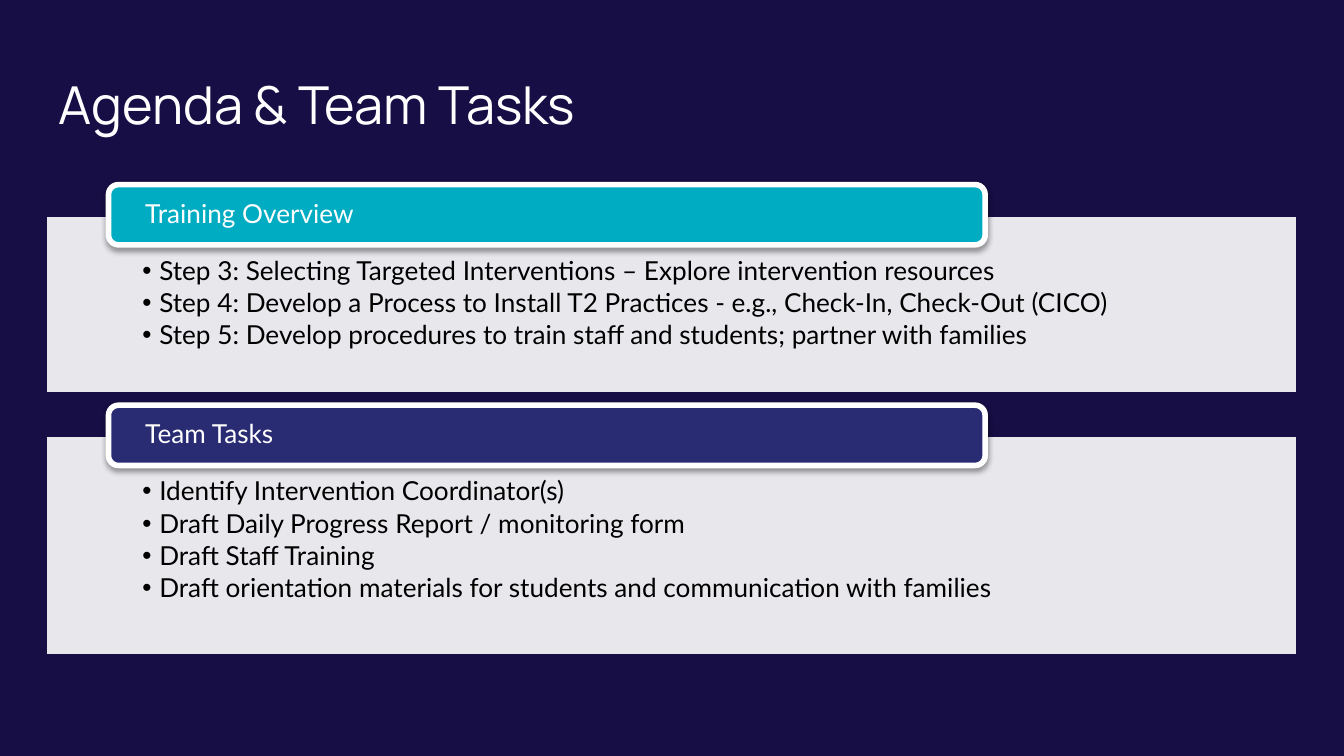
from dataclasses import dataclass

from pptx import Presentation
from pptx.dml.color import RGBColor
from pptx.enum.shapes import MSO_SHAPE
from pptx.enum.text import MSO_ANCHOR, MSO_AUTO_SIZE, PP_ALIGN
from pptx.oxml.ns import qn
from pptx.oxml.xmlchemy import OxmlElement
from pptx.util import Cm, Pt

ROUND_RECT = MSO_SHAPE.ROUNDED_RECTANGLE
TOP, MIDDLE = MSO_ANCHOR.TOP, MSO_ANCHOR.MIDDLE
NO_FIT = MSO_AUTO_SIZE.NONE
LEFT = PP_ALIGN.LEFT


@dataclass(frozen=True)
class Theme:
    navy: str = "160E44"
    white: str = "FFFFFF"
    black: str = "000000"
    teal: str = "00ACC2"
    indigo: str = "292C73"
    title_font: str = "Manrope"
    body_font: str = "Lato"
    title_size: int = 28
    body_size: int = 14


T = Theme()

SECTIONS = [
    ("Training Overview", T.teal, 3.38, [
        "Step 3: Selecting Targeted Interventions – Explore intervention resources",
        "Step 4: Develop a Process to Install T2 Practices - e.g., Check-In, Check-Out (CICO)",
        "Step 5: Develop procedures to train staff and students; partner with families",
    ]),
    ("Team Tasks", T.indigo, 4.17, [
        "Identify Intervention Coordinator(s)",
        "Draft Daily Progress Report / monitoring form",
        "Draft Staff Training",
        "Draft orientation materials for students and communication with families",
    ]),
]


def set_attrs(obj, values):
    for name, value in values.items():
        setattr(obj, name, value)


def add_child(parent, tag, **attrs):
    el = OxmlElement(tag)
    for name, value in attrs.items():
        el.set(name, str(value))
    parent.append(el)
    return el


def place(sp, box):
    set_attrs(sp, dict(zip(("left", "top", "width", "height"), map(Cm, box))))


def paint(sp, fill, line, width):
    sp.fill.solid()
    sp.fill.fore_color.rgb = RGBColor.from_string(fill)
    sp.line.color.rgb = RGBColor.from_string(line)
    sp.line.width = Pt(width)


def write(sp, lines, font, size, color, insets, anchor, after=0):
    tf = sp.text_frame
    sides = ("margin_left", "margin_top", "margin_right", "margin_bottom")
    set_attrs(tf, dict(zip(sides, map(Cm, insets))))
    set_attrs(tf, {"word_wrap": True, "auto_size": NO_FIT, "vertical_anchor": anchor})
    for i, line in enumerate(lines):
        p = tf.add_paragraph() if i else tf.paragraphs[0]
        set_attrs(p, {"alignment": LEFT, "line_spacing": 0.9,
                      "space_before": Pt(0), "space_after": Pt(after)})
        r = p.add_run()
        r.text = line
        set_attrs(r.font, {"name": font, "size": Pt(size)})
        r.font.color.rgb = RGBColor.from_string(color)


def add_shadow(sp):
    sp.shadow.inherit = False
    effects = sp._element.spPr.find(qn("a:effectLst"))
    shadow = add_child(effects, "a:outerShdw", blurRad=Pt(3.1), dist=Pt(1.6),
                       dir=90 * 60000, rotWithShape=0)
    color = add_child(shadow, "a:srgbClr", val=T.black)
    add_child(color, "a:alpha", val=38000)


def fill_title(sp, box, text):
    place(sp, box)
    write(sp, [text], T.title_font, T.title_size, T.white, [0.25] * 4, MIDDLE)


def fill_list(sp, box, items):
    place(sp, box)
    paint(sp, T.white, T.navy, 2)
    color = sp._element.spPr.find(qn("a:solidFill")).find(qn("a:srgbClr"))
    add_child(color, "a:alpha", val=90000)
    write(sp, items, T.body_font, T.body_size, T.black,
          (1.83, 0.81, 1.83, 0.28), TOP, after=2.1)
    for p in sp.text_frame.paragraphs:
        pPr = p._p.get_or_add_pPr()
        pPr.set("marL", str(Cm(0.32)))
        pPr.set("indent", str(-Cm(0.32)))


def add_section(s, body, box, heading, color, items):
    x, y, w, h = box
    fill_list(body, box, items)
    sp = s.shapes.add_shape(ROUND_RECT, 0, 0, 0, 0)
    place(sp, (x + 1.19, y - 0.57, w * 0.7, 1.14))
    paint(sp, color, T.white, 3)
    add_shadow(sp)
    write(sp, [heading], T.body_font, T.body_size, T.white, (0.64, 0, 0.64, 0), MIDDLE)


def build_agenda(s, box):
    x, y, w, h = box
    s.background.fill.solid()
    s.background.fill.fore_color.rgb = RGBColor.from_string(T.navy)
    title, *bodies = s.placeholders
    fill_title(title, (x, y, w, 1.6), "Agenda & Team Tasks")
    heights = [section[2] for section in SECTIONS]
    gap = 0.79
    top = y + h - sum(heights) - gap * (len(heights) - 1)
    for body, (heading, color, height, items) in zip(bodies, SECTIONS):
        add_section(s, body, (x, top, w, height), heading, color, items)
        top += height + gap


def main():
    prs = Presentation()
    set_attrs(prs, {"slide_width": Cm(25.4), "slide_height": Cm(14.29)})
    s = prs.slides.add_slide(prs.slide_layouts.get_by_name("Two Content"))
    build_agenda(s, (0.86, 1.24, 23.67, 11.16))
    prs.save("out.pptx")


if __name__ == "__main__":
    main()
